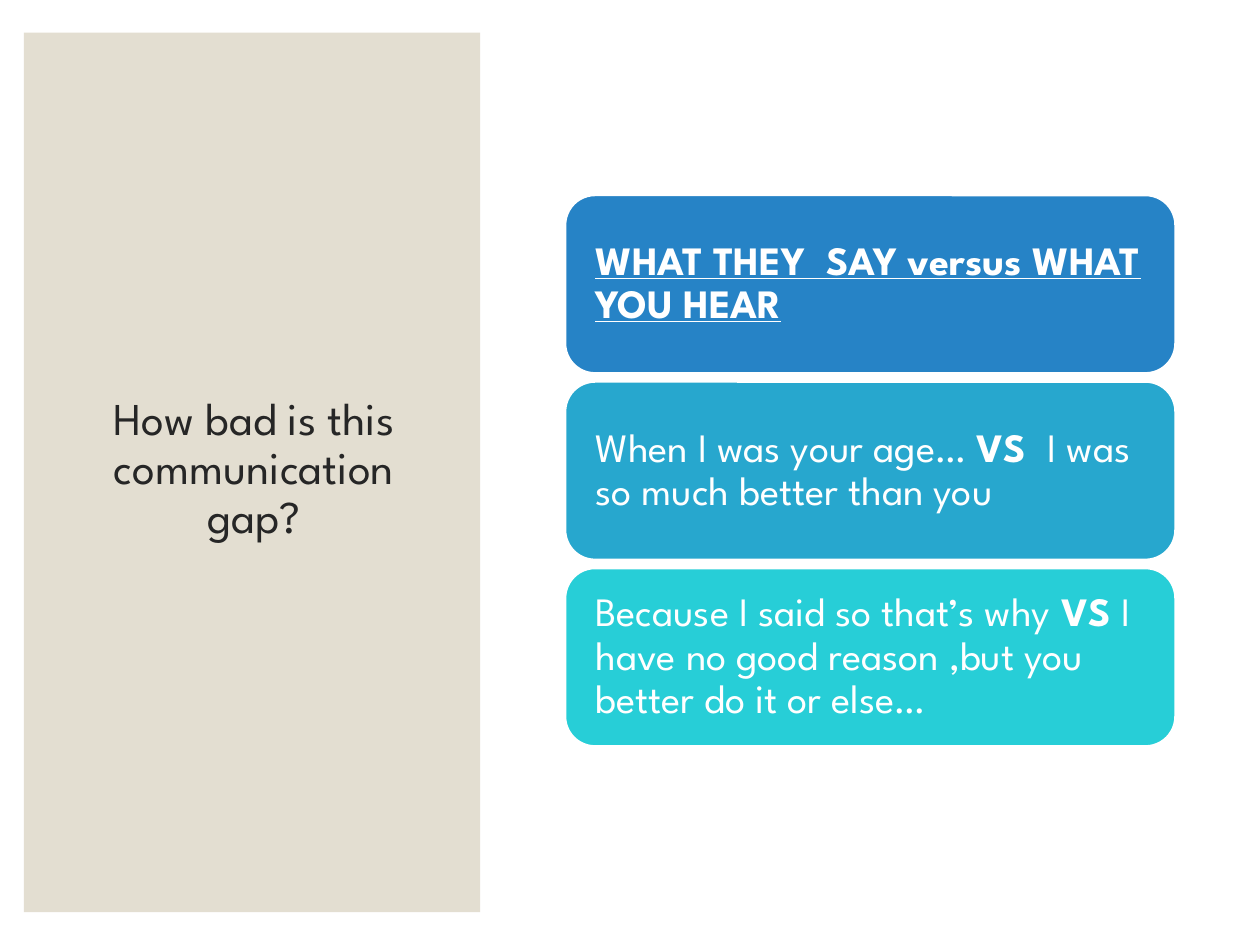
from pptx import Presentation
from pptx.dml.color import RGBColor
from pptx.enum.shapes import MSO_SHAPE as Shape
from pptx.enum.text import MSO_ANCHOR as Anchor, PP_ALIGN as Align
from pptx.util import Cm, Pt

FONT = "League Spartan"
WHITE = RGBColor(0xFF, 0xFF, 0xFF)
SAND = RGBColor(0xE3, 0xDE, 0xD1)
INK = RGBColor(0x26, 0x26, 0x26)
BLUE = RGBColor(0x26, 0x83, 0xC6)
SKY = RGBColor(0x27, 0xA7, 0xCE)
TURQUOISE = RGBColor(0x27, 0xCE, 0xD7)

# Content: each card is a fill and runs of (text, bold, underline)
TITLE = "How bad is this communication gap?"
CARDS = [
    (BLUE, [("WHAT THEY  SAY versus WHAT YOU HEAR", True, True)]),
    (SKY, [("When I was your age… ", False, False),
           ("VS  ", True, False),
           ("I was so much better than you", False, False)]),
    (TURQUOISE, [("Because I said so that’s why ", False, False),
                 ("VS ", True, False),
                 ("I have no good reason ,but you better do it or else…", False, False)]),
]

# Card stack, in cm
CARD_LEFT, CARD_TOP = 11.4, 3.94
CARD_WIDTH, CARD_HEIGHT, CARD_GAP = 12.29, 3.58, 0.18
CARD_INSET = 0.43


def add_box(slide, kind, left, top, width, height, fill):
    sp = slide.shapes.add_shape(kind, Cm(left), Cm(top), Cm(width), Cm(height))
    sp.shadow.inherit = False
    sp.fill.solid()
    sp.fill.fore_color.rgb = fill
    sp.line.fill.background()
    return sp


def write(sp, runs, size, color, align):
    tf = sp.text_frame
    tf.word_wrap = True
    tf.vertical_anchor = Anchor.MIDDLE
    p = tf.paragraphs[0]
    p.alignment = align
    p.line_spacing = 0.9
    for text, bold, underline in runs:
        r = p.add_run()
        r.text = text
        r.font.name = FONT
        r.font.size = Pt(size)
        r.font.bold = bold
        r.font.underline = underline
        r.font.color.rgb = color
    return tf


prs = Presentation()
prs.slide_width, prs.slide_height = Cm(25.4), Cm(19.05)
s = prs.slides.add_slide(prs.slide_layouts[6])
s.background.fill.solid()
s.background.fill.fore_color.rgb = WHITE

# Title panel
add_box(s, Shape.RECTANGLE, 0.48, 0.66, 9.2, 17.73, SAND)
title = s.shapes.add_textbox(Cm(1.2), Cm(1.55), Cm(7.85), Cm(15.85))
write(title, [(TITLE, False, False)], 26, INK, Align.CENTER)

# Stacked cards
for i, (fill, runs) in enumerate(CARDS):
    top = CARD_TOP + i * (CARD_HEIGHT + CARD_GAP)
    card = add_box(s, Shape.ROUNDED_RECTANGLE, CARD_LEFT, top,
                   CARD_WIDTH, CARD_HEIGHT, fill)
    card.line.color.rgb = WHITE
    card.line.width = Pt(1)
    tf = write(card, runs, 23, WHITE, Align.LEFT)
    tf.margin_left = tf.margin_right = Cm(CARD_INSET)
    tf.margin_top = tf.margin_bottom = Cm(CARD_INSET)

prs.save("out.pptx")
